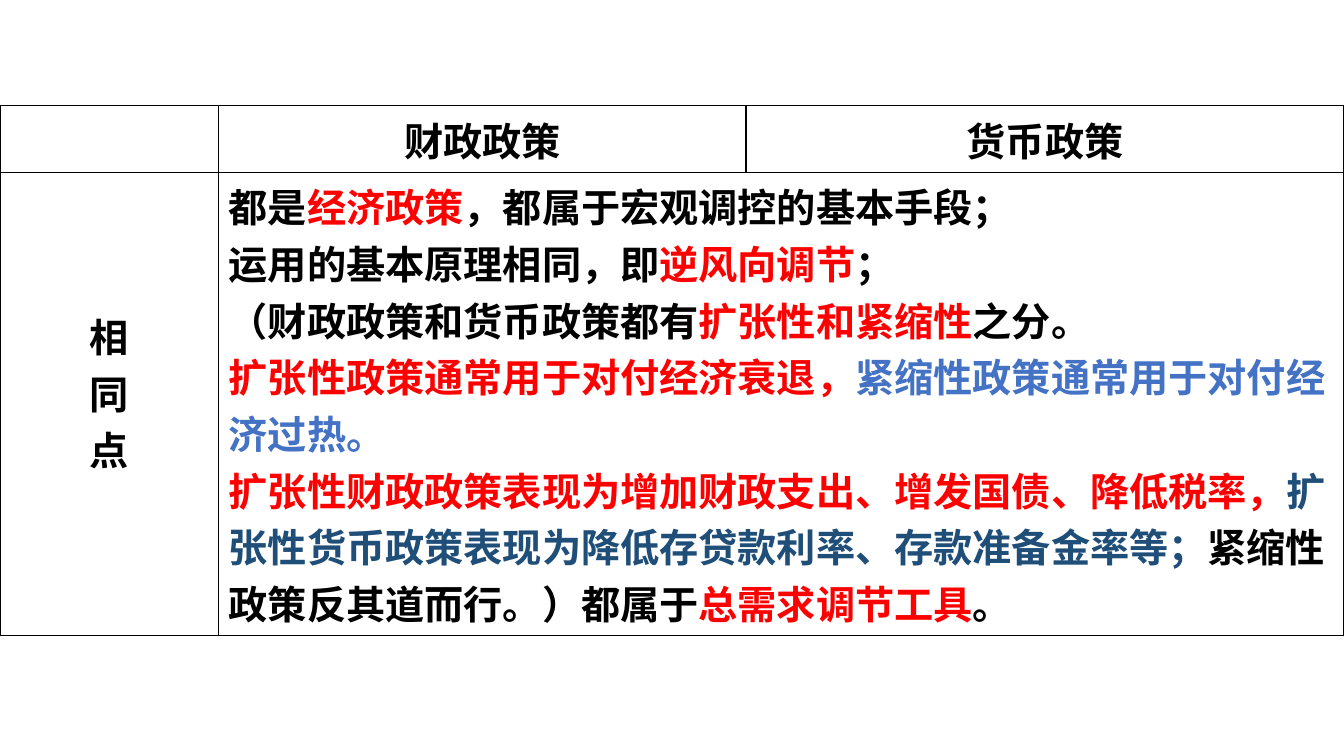
from lxml.etree import SubElement
from pptx import Presentation
from pptx.dml.color import RGBColor
from pptx.enum.lang import MSO_LANGUAGE_ID
from pptx.enum.text import MSO_ANCHOR, PP_ALIGN
from pptx.oxml.ns import qn
from pptx.util import Inches, Pt

THEME = {
    "font": "Times New Roman",
    "size": 28,
    "border": 1,
    "black": "000000",
    "red": "FF0000",
    "blue": "4472C4",
    "navy": "1F4E79",
}

# Each cell is a list of paragraphs; each paragraph is a list of (text, colour) runs.
FISCAL = [[("财政政策", "black")]]
MONETARY = [[("货币政策", "black")]]
SIMILARITY_LABEL = [[(character, "black")] for character in "相同点"]
SIMILARITIES = [
    [("都是", "black"), ("经济政策", "red"), ("，都属于宏观调控的基本手段；", "black")],
    [("运用的基本原理相同，即", "black"), ("逆风向调节", "red"), ("；", "black")],
    [("（财政政策和货币政策都有", "black"), ("扩张性和紧缩性", "red"), ("之分。", "black")],
    [("扩张性政策通常用于对付经济衰退，", "red"),
     ("紧缩性政策通常用于对付经济过热。", "blue")],
    [("扩张性财政政策表现为增加财政支出、增发国债、降低税率，", "red"),
     ("扩张性货币政策表现为降低存贷款利率、存款准备金率等；", "navy"),
     ("紧缩性政策反其道而行。）都属于", "black"),
     ("总需求调节工具", "red"), ("。", "black")],
]

SLIDE_SIZE = (13.33, 7.5)
TABLE_TOP = 1.05
COLUMN_WIDTHS = (2.17, 5.23, 5.93)
ROW_HEIGHTS = (0.57, 4.48)
LABEL_BOTTOM_MARGIN = 0.29


def style_cell(cell):
    """Draw the four borders and clear the banded fill."""
    properties = cell._tc.get_or_add_tcPr()
    for side in ("a:lnL", "a:lnR", "a:lnT", "a:lnB"):
        border = SubElement(properties, qn(side), w=str(Pt(THEME["border"])))
        fill = SubElement(border, qn("a:solidFill"))
        SubElement(fill, qn("a:srgbClr"), val=THEME["black"])
    cell.fill.background()


def write_cell(cell, paragraphs, alignment):
    frame = cell.text_frame
    for index, runs in enumerate(paragraphs):
        paragraph = frame.add_paragraph() if index else frame.paragraphs[0]
        paragraph.alignment = alignment
        for text, colour in runs:
            run = paragraph.add_run()
            run.text = text
            run.font.name = THEME["font"]
            run.font.size = Pt(THEME["size"])
            run.font.bold = True
            run.font.color.rgb = RGBColor.from_string(THEME[colour])
            run.font.language_id = MSO_LANGUAGE_ID.SIMPLIFIED_CHINESE


def main():
    presentation = Presentation()
    presentation.slide_width, presentation.slide_height = map(Inches, SLIDE_SIZE)
    slide = presentation.slides.add_slide(presentation.slide_layouts[6])

    comparison = slide.shapes.add_table(
        len(ROW_HEIGHTS), len(COLUMN_WIDTHS), 0, Inches(TABLE_TOP),
        Inches(sum(COLUMN_WIDTHS)), Inches(sum(ROW_HEIGHTS))).table
    comparison.first_row = comparison.horz_banding = False
    for column, width in zip(comparison.columns, COLUMN_WIDTHS):
        column.width = Inches(width)
    for row, height in zip(comparison.rows, ROW_HEIGHTS):
        row.height = Inches(height)
    for cell in comparison.iter_cells():
        style_cell(cell)

    comparison.cell(1, 1).merge(comparison.cell(1, 2))
    write_cell(comparison.cell(0, 1), FISCAL, PP_ALIGN.CENTER)
    write_cell(comparison.cell(0, 2), MONETARY, PP_ALIGN.CENTER)
    write_cell(comparison.cell(1, 1), SIMILARITIES, PP_ALIGN.LEFT)

    label_cell = comparison.cell(1, 0)
    write_cell(label_cell, SIMILARITY_LABEL, PP_ALIGN.CENTER)
    label_cell.vertical_anchor = MSO_ANCHOR.MIDDLE
    label_cell.margin_bottom = Inches(LABEL_BOTTOM_MARGIN)

    presentation.save("out.pptx")


if __name__ == "__main__":
    main()
